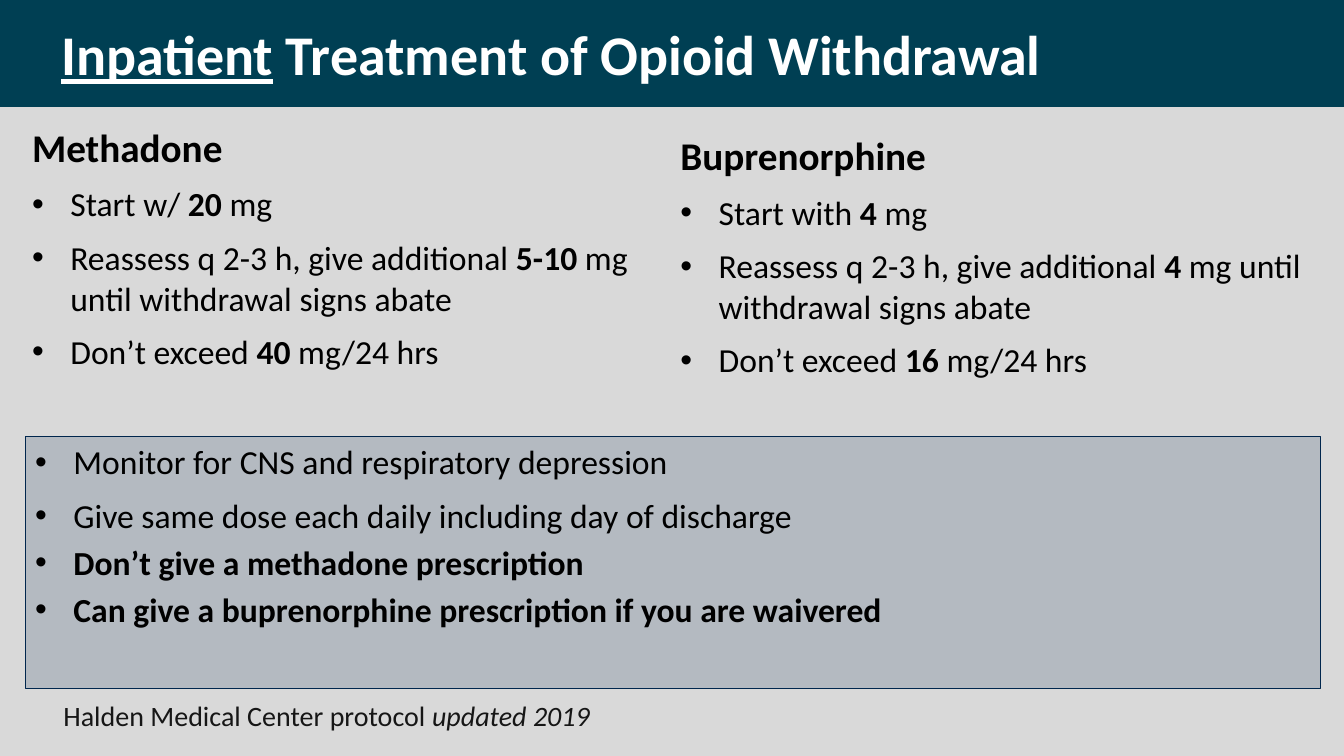
import pptx
import pptx.dml.color
import pptx.enum.shapes
import pptx.enum.text
import pptx.oxml.ns
import pptx.util
from lxml import etree

WIDTH, HEIGHT = 13.33, 7.5
ANCHOR = pptx.enum.text.MSO_ANCHOR
BULLET_INDENT = 0.38


def color(hex_value):
    return pptx.dml.color.RGBColor.from_string(hex_value)


def inches(values):
    return [pptx.util.Inches(value) for value in values]


def add_xml(parent, tag, **attributes):
    return etree.SubElement(parent, pptx.oxml.ns.qn(tag), attributes)


def add_panel(slide, box, fill, line=None, opacity=None):
    panel = slide.shapes.add_shape(pptx.enum.shapes.MSO_SHAPE.RECTANGLE, *inches(box))
    panel.shadow.inherit = False
    panel.fill.solid()
    panel.fill.fore_color.rgb = color(fill)
    if opacity:
        shade = panel.fill._xPr.find(".//" + pptx.oxml.ns.qn("a:srgbClr"))
        add_xml(shade, "a:alpha", val=str(opacity * 1000))
    if line:
        panel.line.color.rgb = color(line)
        panel.line.width = pptx.util.Pt(0.75)
    else:
        panel.line.fill.background()
    return panel.text_frame


def set_frame(frame, anchor=ANCHOR.TOP, left=0.1):
    settings = {
        "word_wrap": True,
        "vertical_anchor": anchor,
        "margin_left": pptx.util.Inches(left),
        "margin_right": pptx.util.Inches(0.1),
        "margin_top": pptx.util.Inches(0.05),
        "margin_bottom": pptx.util.Inches(0.05),
    }
    for key, value in settings.items():
        setattr(frame, key, value)


def write(paragraph, text, size, ink="000000", marked="bold", base=None, gap=0, bullet=False):
    paragraph.alignment = pptx.enum.text.PP_ALIGN.LEFT
    paragraph.space_before = pptx.util.Pt(round(size * gap, 1))
    if bullet:
        properties = paragraph._p.get_or_add_pPr()
        indent = pptx.util.Inches(BULLET_INDENT)
        properties.set("marL", str(indent))
        properties.set("indent", str(-indent))
        add_xml(properties, "a:buFont", typeface="Arial")
        add_xml(properties, "a:buChar", char="•")
    for index, part in enumerate(text.split("*")):
        if not part:
            continue
        run = paragraph.add_run()
        run.text = part
        style = {"name": "Calibri", "size": pptx.util.Pt(size), **(base or {})}
        if index % 2:
            style[marked] = True
        for key, value in style.items():
            setattr(run.font, key, value)
        run.font.color.rgb = color(ink)


def add_title(slide, box, title):
    frame = add_panel(slide, box, "003F53")
    set_frame(frame, ANCHOR.MIDDLE, left=0.61)
    write(frame.paragraphs[0], title, 40, "FFFFFF", "underline", {"bold": True})


def add_drug(slide, box, drug, steps):
    frame = slide.shapes.add_textbox(*inches(box)).text_frame
    set_frame(frame)
    write(frame.paragraphs[0], drug, 28, base={"bold": True})
    for step in steps:
        write(frame.add_paragraph(), step, 24, gap=0.4, bullet=True)


def add_precautions(slide, box, precautions):
    frame = add_panel(slide, box, "00264D", "00264D", 17)
    set_frame(frame)
    for index, (precaution, gap) in enumerate(precautions):
        paragraph = frame.add_paragraph() if index else frame.paragraphs[0]
        write(paragraph, precaution, 24, gap=gap, bullet=True)


def add_protocol(slide, box, protocol):
    frame = slide.shapes.add_textbox(*inches(box)).text_frame
    set_frame(frame, ANCHOR.MIDDLE)
    write(frame.paragraphs[0], protocol, 20, "161616", "italic")


def main():
    deck = pptx.Presentation()
    deck.slide_width, deck.slide_height = inches((WIDTH, HEIGHT))
    slide = deck.slides.add_slide(deck.slide_layouts[6])
    slide.background.fill.solid()
    slide.background.fill.fore_color.rgb = color("D9D9D9")

    add_protocol(slide, (0.53, 6.85, 6.84, 0.5),
                 "Halden Medical Center protocol *updated 2019*")
    drugs = [
        ("Methadone", (0.22, 1.17, 6.44, 3.17), "Start w/", "20", "5-10", "40"),
        ("Buprenorphine", (6.65, 1.25, 6.44, 3.08), "Start with", "4", "4", "16"),
    ]
    for drug, box, start, first, extra, limit in drugs:
        add_drug(slide, box, drug, [
            f"{start} *{first}* mg",
            f"Reassess q 2-3 h, give additional *{extra}* mg until withdrawal signs abate",
            f"Don’t exceed *{limit}* mg/24 hrs",
        ])
    add_precautions(slide, (0.25, 4.33, 12.85, 2.5), [
        ("Monitor for CNS and respiratory depression", 0),
        ("Give same dose each daily including day of discharge", 0.4),
        ("*Don’t give a methadone prescription*", 0.2),
        ("*Can give a buprenorphine prescription if you are waivered*", 0.2),
    ])
    add_title(slide, (0, 0, WIDTH, 1.06), "*Inpatient* Treatment of Opioid Withdrawal")
    deck.save("out.pptx")


if __name__ == "__main__":
    main()
